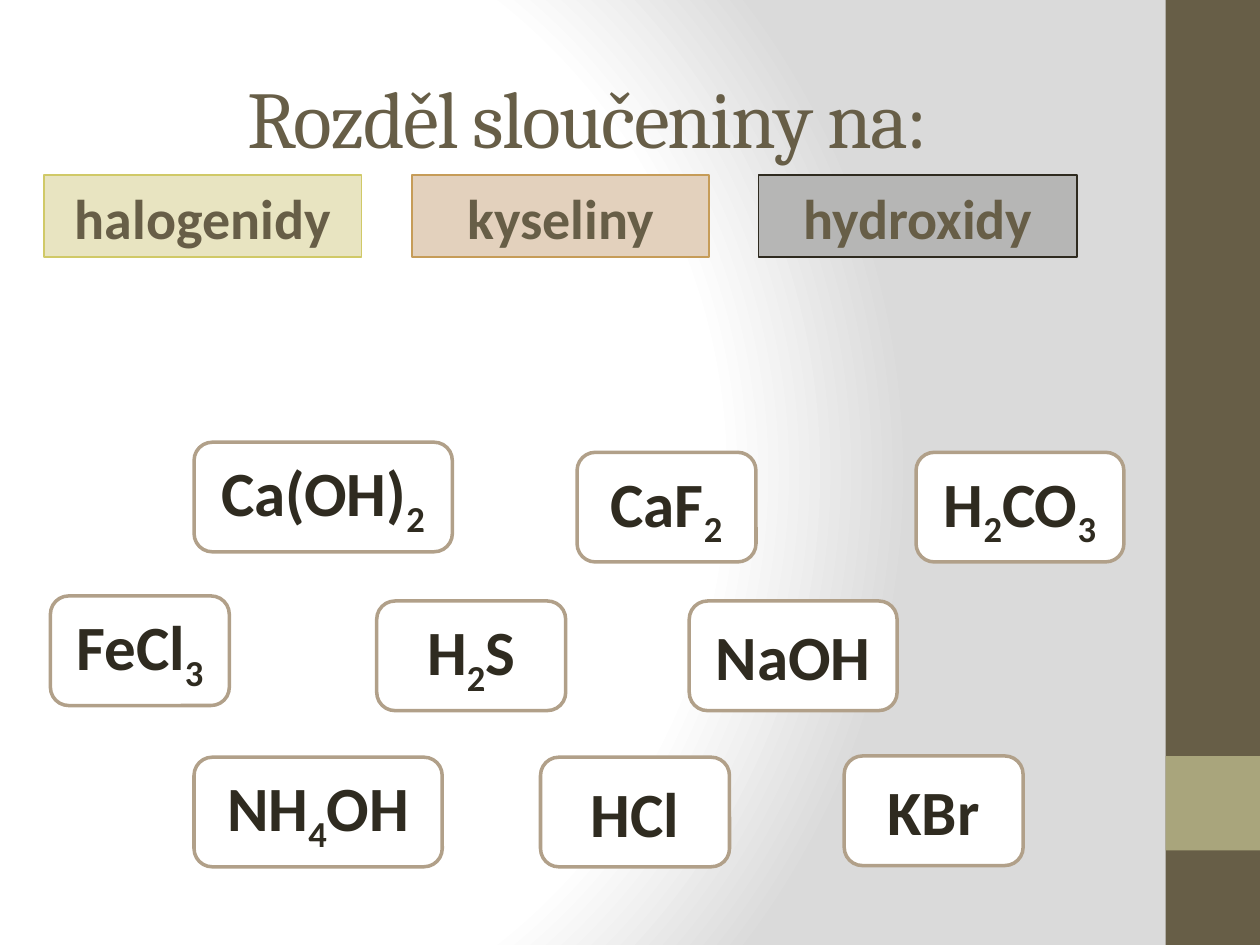
from itertools import groupby

from pptx import Presentation
from pptx.dml.color import RGBColor
from pptx.enum.shapes import MSO_SHAPE
from pptx.enum.text import MSO_ANCHOR, PP_ALIGN
from pptx.oxml import parse_xml
from pptx.oxml.ns import nsdecls
from pptx.util import Inches, Pt

RECT, ROUND = MSO_SHAPE.RECTANGLE, MSO_SHAPE.ROUNDED_RECTANGLE
MIDDLE, BOTTOM = MSO_ANCHOR.MIDDLE, MSO_ANCHOR.BOTTOM
CENTER = PP_ALIGN.CENTER

BROWN, OLIVE, WHITE = "675E47", "A9A57C", "FFFFFF"
INK, EDGE = "2F2B20", "B1A089"

# text, left, width, fill, line
GROUPS = [
    ("halogenidy", 0.35, 2.52, "E8E4C1", "D0C967"),
    ("kyseliny", 3.27, 2.36, "E3D1BD", "C69C58"),
    ("hydroxidy", 6.02, 2.53, "B6B6B5", "2E2A1F"),
]
# formula, left, top, width
CARDS = [
    ("HCl", 4.29, 6.01, 1.5),
    ("H2S", 2.99, 4.77, 1.5),
    ("H2CO3", 7.27, 3.59, 1.65),
    ("NaOH", 5.47, 4.77, 1.65),
    ("Ca(OH)2", 1.54, 3.51, 2.05),
    ("NH4OH", 1.54, 6.01, 1.97),
    ("CaF2", 4.58, 3.59, 1.42),
    ("KBr", 6.7, 6, 1.42),
    ("FeCl3", 0.4, 4.73, 1.42),
]


def color(code):
    return RGBColor.from_string(code)


def add_glow(slide):
    """Fill the background with a radial gradient from white to grey."""
    stops = "".join(
        f'<a:gs pos="{pos * 1000}"><a:srgbClr val="{code}"/></a:gs>'
        for pos, code in [(0, WHITE), (75, WHITE), (100, "DADADA")]
    )
    slide.element.cSld.insert(0, parse_xml(
        f'<p:bg {nsdecls("p", "a")}><p:bgPr>'
        f'<a:gradFill rotWithShape="1"><a:gsLst>{stops}</a:gsLst>'
        '<a:path path="circle">'
        '<a:fillToRect l="20000" t="50000" r="100000" b="50000"/>'
        '</a:path></a:gradFill><a:effectLst/></p:bgPr></p:bg>'
    ))


def add_box(slide, kind, left, top, width, height, fill, line=None, weight=1):
    box = slide.shapes.add_shape(
        kind, Inches(left), Inches(top), Inches(width), Inches(height))
    box.shadow.inherit = False
    box.fill.solid()
    box.fill.fore_color.rgb = color(fill)
    if line:
        box.line.color.rgb = color(line)
        box.line.width = Pt(weight)
    else:
        box.line.fill.background()
    return box


def style_text(shape, anchor, face, size, code, bold=False):
    """Centre and format the first paragraph, and return it."""
    frame = shape.text_frame
    frame.word_wrap = True
    frame.vertical_anchor = anchor
    para = frame.paragraphs[0]
    para.alignment = CENTER
    font = para.font
    font.name, font.size, font.bold = face, Pt(size), bold
    font.color.rgb = color(code)
    return para


def add_title(slide, text):
    box = slide.shapes.add_textbox(
        Inches(0.5), Inches(0.3), Inches(8.33), Inches(1.25))
    run = style_text(box, MIDDLE, "Cambria", 46, BROWN).add_run()
    run.text = text
    run._r.get_or_add_rPr().set("spc", "-100")


def add_group(slide, text, left, width, fill, line):
    box = add_box(slide, RECT, left, 1.39, width, 0.65, fill, line)
    style_text(box, BOTTOM, "Calibri", 32, BROWN, True).add_run().text = text


def add_card(slide, formula, left, top, width):
    """Add a formula card with its digits as subscripts."""
    box = add_box(slide, ROUND, left, top, width, 0.87, WHITE, EDGE, 2)
    para = style_text(box, MIDDLE, "Calibri", 36, INK, True)
    for digit, part in groupby(formula, str.isdigit):
        run = para.add_run()
        run.text = "".join(part)
        if digit:
            run._r.get_or_add_rPr().set("baseline", "-25000")


def main():
    deck = Presentation()
    deck.slide_width, deck.slide_height = Inches(10), Inches(7.5)
    slide = deck.slides.add_slide(deck.slide_layouts[6])
    add_glow(slide)
    add_box(slide, RECT, 9.25, 0, 0.75, 7.5, BROWN)
    add_box(slide, RECT, 9.25, 6, 0.75, 0.75, OLIVE)
    add_title(slide, "Rozděl sloučeniny na:")
    for group in GROUPS:
        add_group(slide, *group)
    for card in CARDS:
        add_card(slide, *card)
    deck.save("out.pptx")


if __name__ == "__main__":
    main()
